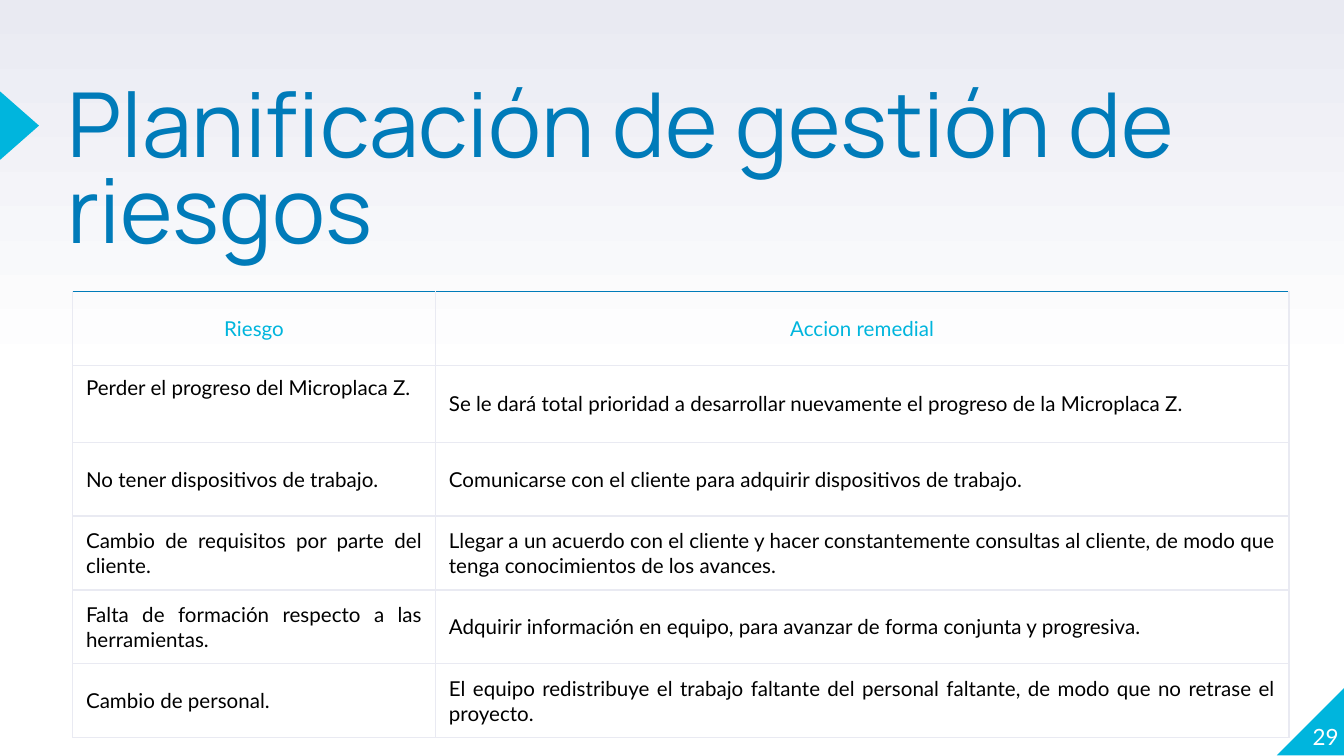
from copy import deepcopy

from lxml.etree import SubElement
from pptx import Presentation
from pptx.dml.color import RGBColor
from pptx.enum.shapes import MSO_SHAPE
from pptx.enum.text import MSO_ANCHOR, MSO_AUTO_SIZE, PP_ALIGN
from pptx.oxml.ns import qn
from pptx.util import Inches, Pt

SLIDE_WIDTH = 10
SLIDE_HEIGHT = SLIDE_WIDTH * 9 / 16

TITLE = "Planificación de gestión de riesgos"
PAGE_NUMBER = "29"
RISKS = [
    ("Riesgo", "Accion remedial"),
    ("Perder el progreso del Microplaca Z.",
     "Se le dará total prioridad a desarrollar nuevamente el progreso de la Microplaca Z."),
    ("No tener dispositivos de trabajo.",
     "Comunicarse con el cliente para adquirir dispositivos de trabajo."),
    ("Cambio de requisitos por parte del cliente.",
     "Llegar a un acuerdo con el cliente y hacer constantemente consultas al cliente, "
     "de modo que tenga conocimientos de los avances."),
    ("Falta de formación respecto a las herramientas.",
     "Adquirir información en equipo, para avanzar de forma conjunta y progresiva."),
    ("Cambio de personal.",
     "El equipo redistribuye el trabajo faltante del personal faltante, "
     "de modo que no retrase el proyecto."),
]
COLUMN_WIDTHS = [2.7, 6.35]
ROW_HEIGHTS = [0.55, 0.57, 0.55, 0.55, 0.55, 0.55]
TOP_ALIGNED_CELL = (1, 0)

BLUE, CYAN, PALE, WHITE, BLACK = "007BB9", "00B5DD", "E9EAF2", "FFFFFF", "000000"
BACKGROUND_STOPS = [(0, WHITE), (0.5, WHITE), (1, PALE)]
# shape, left, top, width, height, rotation
TRIANGLES = [
    (MSO_SHAPE.RIGHT_TRIANGLE, 9.5, 5.11, 0.51, 0.51, 270),
    (MSO_SHAPE.ISOSCELES_TRIANGLE, -0.11, 0.79, 0.51, 0.29, 90),
]
NO_MARGINS = {f"margin_{side}": 0 for side in ("left", "top", "right", "bottom")}
CELL_MARGINS = {"margin_left": Inches(0.1), "margin_right": Inches(0.1),
                "margin_top": Inches(0.07), "margin_bottom": Inches(0.07)}


def color(value):
    return RGBColor.from_string(value)


def apply(target, values):
    for name, value in values.items():
        setattr(target, name, value)


def write(frame, text, size, font, ink, **paragraph_format):
    para = frame.paragraphs[0]
    apply(para, paragraph_format)
    span = para.add_run()
    span.text = text
    apply(span.font, {"size": Pt(size), "name": font, "bold": False})
    span.font.color.rgb = color(ink)


def paint_background(slide):
    fill = slide.background.fill
    fill.gradient()
    fill.gradient_angle = 90
    stops = slide.element.find(".//" + qn("a:gsLst"))
    stops.insert(1, deepcopy(stops[0]))
    for stop, (position, value) in zip(fill.gradient_stops, BACKGROUND_STOPS):
        stop.position = position
        stop.color.rgb = color(value)


def add_triangles(slide):
    for kind, left, top, width, height, rotation in TRIANGLES:
        triangle = slide.shapes.add_shape(
            kind, Inches(left), Inches(top), Inches(width), Inches(height))
        triangle.rotation = rotation
        triangle.shadow.inherit = False
        triangle.fill.solid()
        triangle.fill.fore_color.rgb = color(CYAN)
        triangle.line.fill.background()


def add_title(slide):
    title = slide.shapes.title
    apply(title, {"left": Inches(0.5), "top": Inches(0.66),
                  "width": Inches(9.28), "height": Inches(1.18)})
    apply(title.text_frame, {**NO_MARGINS, "word_wrap": True,
                             "auto_size": MSO_AUTO_SIZE.NONE,
                             "vertical_anchor": MSO_ANCHOR.TOP})
    write(title.text_frame, TITLE, 48, "Manrope", BLUE,
          alignment=PP_ALIGN.LEFT, line_spacing=0.8)


def add_page_number(slide):
    box = slide.shapes.add_textbox(Inches(9.46), Inches(5.07), Inches(0.5), Inches(0.51))
    apply(box.text_frame, {**NO_MARGINS, "word_wrap": True,
                           "vertical_anchor": MSO_ANCHOR.BOTTOM})
    write(box.text_frame, PAGE_NUMBER, 12, "Lato", WHITE, alignment=PP_ALIGN.RIGHT)


def set_borders(cell, top):
    properties = cell._tc.get_or_add_tcPr()
    edges = {"lnL": PALE, "lnR": PALE, "lnT": top, "lnB": PALE}
    for index, (edge, value) in enumerate(edges.items()):
        line = SubElement(properties, qn("a:" + edge), w=str(Pt(0.75)))
        SubElement(SubElement(line, qn("a:solidFill")), qn("a:srgbClr"), val=value)
        properties.insert(index, line)


def add_risk_table(slide):
    table = slide.shapes.add_table(
        len(RISKS), len(COLUMN_WIDTHS), Inches(0.54), Inches(2.17),
        Inches(sum(COLUMN_WIDTHS)), Inches(sum(ROW_HEIGHTS))).table
    apply(table, {"first_row": False, "horz_banding": False})
    for column, width in zip(table.columns, COLUMN_WIDTHS):
        column.width = Inches(width)
    for row, height in zip(table.rows, ROW_HEIGHTS):
        row.height = Inches(height)
    for i, texts in enumerate(RISKS):
        header = i == 0
        for j, text in enumerate(texts):
            cell = table.cell(i, j)
            top_aligned = (i, j) == TOP_ALIGNED_CELL
            anchor = MSO_ANCHOR.TOP if top_aligned else MSO_ANCHOR.MIDDLE
            apply(cell, {**CELL_MARGINS, "vertical_anchor": anchor})
            cell.fill.background()
            set_borders(cell, BLUE if header else PALE)
            write(cell.text_frame, text, 11, "Lato", CYAN if header else BLACK,
                  alignment=PP_ALIGN.CENTER if header else PP_ALIGN.JUSTIFY)


def main():
    deck = Presentation()
    apply(deck, {"slide_width": Inches(SLIDE_WIDTH), "slide_height": Inches(SLIDE_HEIGHT)})
    slide = deck.slides.add_slide(deck.slide_layouts.get_by_name("Title Only"))
    paint_background(slide)
    add_triangles(slide)
    add_title(slide)
    add_page_number(slide)
    add_risk_table(slide)
    deck.save("out.pptx")


if __name__ == "__main__":
    main()
